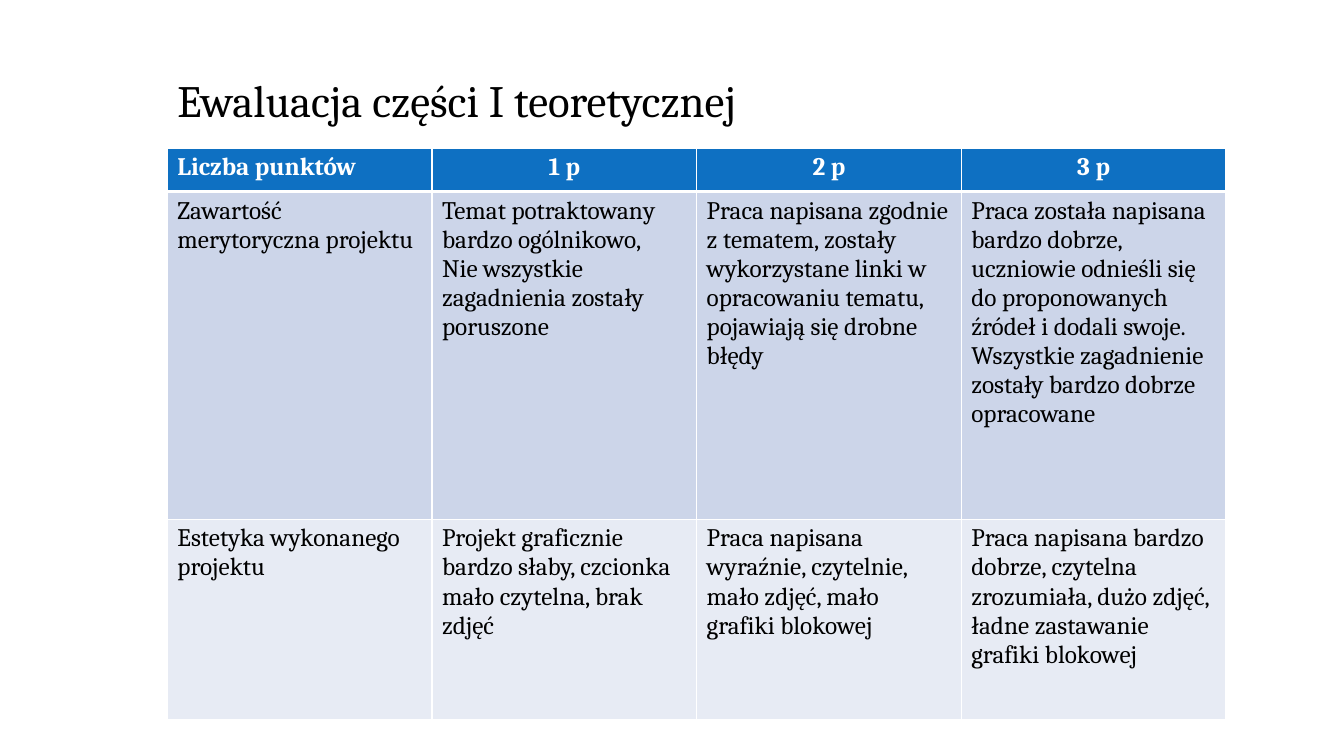
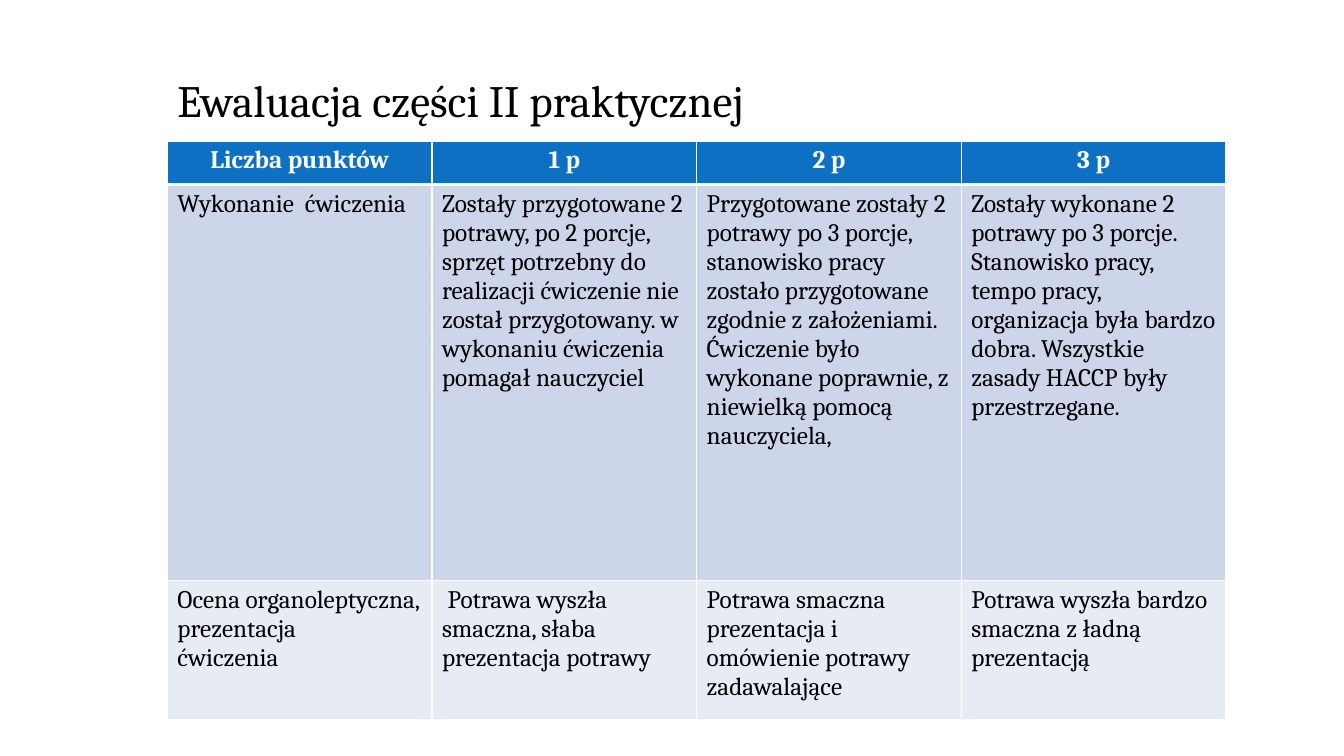
from dataclasses import dataclass

from lxml import etree
from pptx import Presentation
from pptx.dml.color import RGBColor
from pptx.enum import text
from pptx.oxml import ns
from pptx.util import Inches, Pt


@dataclass(frozen=True)
class Theme:
    font: str = "Cambria"
    title_size: int = 32
    table_size: int = 18
    ink: str = "000000"
    white: str = "FFFFFF"
    header: str = "0E70C2"
    bands: tuple = ("CCD5E9", "E7EBF4")
    thin: int = 1
    thick: int = 3


THEME = Theme()
LEFT, WIDTH = 1.66, 10.5
TITLE_TOP, TITLE_HEIGHT = 0.58, 0.73
TABLE_BOTTOM = 7.14
LEFT_ALIGN, CENTER = text.PP_ALIGN.LEFT, text.PP_ALIGN.CENTER
HEADINGS = ["Liczba punktów", "1 p", "2 p", "3 p"]

SLIDES = [
    {
        "title": "Ewaluacja części I teoretycznej",
        "corner_align": LEFT_ALIGN,
        "row_heights": [0.43, 3.25, 1.99],
        "criteria": [
            [
                "Zawartość merytoryczna projektu",
                "Temat potraktowany bardzo ogólnikowo,\n"
                "Nie wszystkie zagadnienia zostały poruszone",
                "Praca napisana zgodnie z tematem, zostały wykorzystane linki "
                "w opracowaniu tematu, pojawiają się drobne błędy",
                "Praca została napisana bardzo dobrze, uczniowie odnieśli się "
                "do proponowanych źródeł i dodali swoje.\n"
                "Wszystkie zagadnienie zostały bardzo dobrze opracowane",
            ],
            [
                "Estetyka wykonanego projektu",
                "Projekt graficznie bardzo słaby, czcionka mało czytelna, brak zdjęć",
                "Praca napisana wyraźnie, czytelnie, mało zdjęć, mało grafiki blokowej",
                "Praca napisana bardzo dobrze, czytelna zrozumiała, dużo zdjęć, "
                "ładne zastawanie grafiki blokowej",
            ],
        ],
    },
    {
        "title": "Ewaluacja części II praktycznej",
        "corner_align": CENTER,
        "row_heights": [0.43, 3.93, 1.38],
        "criteria": [
            [
                "Wykonanie  ćwiczenia",
                "Zostały przygotowane 2 potrawy, po 2 porcje, sprzęt potrzebny do "
                "realizacji ćwiczenie nie został przygotowany. w wykonaniu "
                "ćwiczenia pomagał nauczyciel",
                "Przygotowane zostały 2 potrawy po 3 porcje, stanowisko pracy "
                "zostało przygotowane zgodnie z założeniami. Ćwiczenie było "
                "wykonane poprawnie, z niewielką pomocą nauczyciela,",
                "Zostały wykonane 2 potrawy po 3 porcje. Stanowisko pracy, tempo "
                "pracy, organizacja była bardzo dobra. Wszystkie zasady HACCP "
                "były przestrzegane.",
            ],
            [
                "Ocena organoleptyczna,\nprezentacja\nćwiczenia",
                " Potrawa wyszła smaczna, słaba prezentacja potrawy",
                "Potrawa smaczna prezentacja i omówienie potrawy zadawalające",
                "Potrawa wyszła bardzo smaczna z ładną prezentacją",
            ],
        ],
    },
]


def format_text(text_frame, size, color, align, bold=False):
    for paragraph in text_frame.paragraphs:
        paragraph.alignment = align
        for run in paragraph.runs:
            run.font.name = THEME.font
            run.font.size = Pt(size)
            run.font.bold = bold
            run.font.color.rgb = RGBColor.from_string(color)


def set_borders(cell, widths):
    properties = cell._tc.get_or_add_tcPr()
    for side, width in widths.items():
        line = etree.SubElement(properties, ns.qn(f"a:ln{side}"), w=str(Pt(width)))
        fill = etree.SubElement(line, ns.qn("a:solidFill"))
        etree.SubElement(fill, ns.qn("a:srgbClr"), val=THEME.white)


def add_title(slide, title):
    shape = slide.shapes.title
    shape.left, shape.top = Inches(LEFT), Inches(TITLE_TOP)
    shape.width, shape.height = Inches(WIDTH), Inches(TITLE_HEIGHT)
    text_frame = shape.text_frame
    text_frame.text = title
    text_frame.auto_size = text.MSO_AUTO_SIZE.NONE
    text_frame.vertical_anchor = text.MSO_ANCHOR.BOTTOM
    text_frame.paragraphs[0].line_spacing = 0.9
    format_text(text_frame, THEME.title_size, THEME.ink, LEFT_ALIGN)


def add_rubric(slide, content):
    rows = [HEADINGS] + content["criteria"]
    heights = content["row_heights"]
    height = sum(heights)
    table = slide.shapes.add_table(
        len(rows), len(HEADINGS), Inches(LEFT), Inches(TABLE_BOTTOM - height),
        Inches(WIDTH), Inches(height),
    ).table
    for column in table.columns:
        column.width = Inches(WIDTH / len(HEADINGS))
    for r, values in enumerate(rows):
        table.rows[r].height = Inches(heights[r])
        is_header = r == 0
        fill = THEME.header if is_header else THEME.bands[(r - 1) % 2]
        color = THEME.white if is_header else THEME.ink
        borders = {
            "L": THEME.thin,
            "R": THEME.thin,
            "T": THEME.thick if r == 1 else THEME.thin,
            "B": THEME.thick if is_header else THEME.thin,
        }
        for c, value in enumerate(values):
            cell = table.cell(r, c)
            cell.text_frame.text = value
            align = CENTER if is_header else LEFT_ALIGN
            if is_header and c == 0:
                align = content["corner_align"]
            format_text(cell.text_frame, THEME.table_size, color, align, is_header)
            set_borders(cell, borders)
            cell.fill.solid()
            cell.fill.fore_color.rgb = RGBColor.from_string(fill)


def main():
    presentation = Presentation()
    presentation.slide_width = Inches(13.33)
    presentation.slide_height = Inches(7.5)
    title_only = presentation.slide_layouts[5]
    for content in SLIDES:
        slide = presentation.slides.add_slide(title_only)
        add_title(slide, content["title"])
        add_rubric(slide, content)
    presentation.save("out.pptx")


if __name__ == "__main__":
    main()
